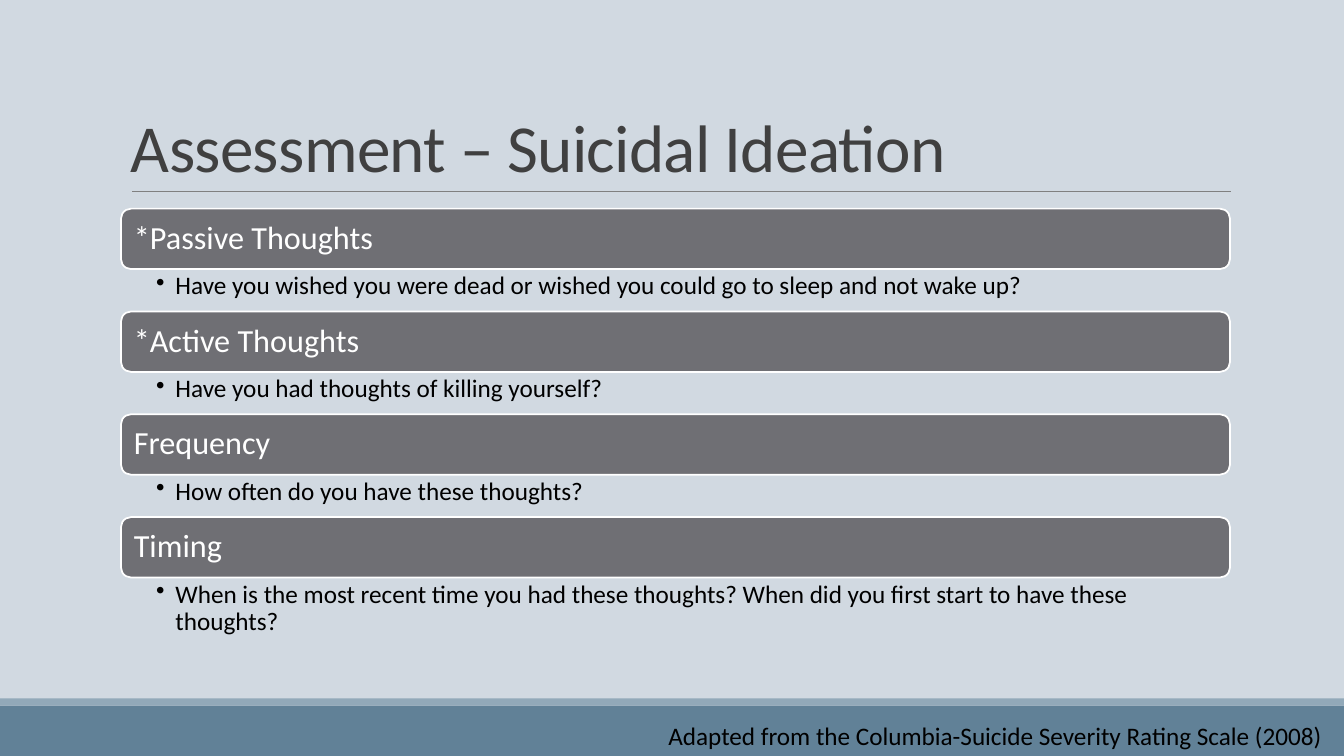
from dataclasses import dataclass

from lxml import etree
from pptx import Presentation
from pptx.dml.color import RGBColor
from pptx.enum.shapes import MSO_CONNECTOR, MSO_SHAPE
from pptx.enum.text import MSO_ANCHOR, PP_ALIGN
from pptx.oxml.ns import qn
from pptx.shapes.autoshape import Shape
from pptx.slide import Slide
from pptx.util import Inches, Pt

RECTANGLE = MSO_SHAPE.RECTANGLE
ROUNDED = MSO_SHAPE.ROUNDED_RECTANGLE
STRAIGHT = MSO_CONNECTOR.STRAIGHT
TOP, MIDDLE, BOTTOM = MSO_ANCHOR.TOP, MSO_ANCHOR.MIDDLE, MSO_ANCHOR.BOTTOM
LEFT = PP_ALIGN.LEFT

FONT = "Calibri"
COLORS = {
    "background": "D1D9E1",
    "footer": "618197",
    "footer_edge": "92A9B9",
    "rule": "808080",
    "title": "404040",
    "bar": "6F6F74",
    "white": "FFFFFF",
    "black": "000000",
}
SLIDE_WIDTH, SLIDE_HEIGHT = 13.33, 7.5
CONTENT_LEFT, CONTENT_WIDTH = 1.2, 11
FIRST_BAR_TOP, BAR_HEIGHT, TOPIC_PITCH = 2.07, 0.6, 1.02
QUESTION_OFFSET = 0.61
HANGING_INDENT = 0.19


@dataclass(frozen=True)
class Topic:
    heading: str
    question: str
    question_height: float = 0.42


@dataclass(frozen=True)
class TextStyle:
    size: float
    color: str
    anchor: MSO_ANCHOR = TOP
    insets: tuple[float, float, float, float] = (0.1, 0.05, 0.1, 0.05)
    line_spacing: float = 1.0


TITLE = TextStyle(48, "title", BOTTOM, line_spacing=0.85)
HEADING = TextStyle(23, "white", MIDDLE, (0.1, 0.1, 0.1, 0.1), 0.9)
QUESTION = TextStyle(18, "black", TOP, (0.35, 0.03, 0.18, 0.03), 0.9)
SOURCE = TextStyle(18, "black")

TOPICS = [
    Topic("*Passive Thoughts",
          "Have you wished you were dead or wished you could go to sleep and not wake up?"),
    Topic("*Active Thoughts", "Have you had thoughts of killing yourself?"),
    Topic("Frequency", "How often do you have these thoughts?"),
    Topic("Timing",
          "When is the most recent time you had these thoughts? "
          "When did you first start to have these thoughts?", 0.62),
]


def rgb(name: str) -> RGBColor:
    return RGBColor.from_string(COLORS[name])


def write(shape: Shape, text: str, style: TextStyle) -> None:
    frame = shape.text_frame
    frame.word_wrap = True
    frame.vertical_anchor = style.anchor
    (frame.margin_left, frame.margin_top,
     frame.margin_right, frame.margin_bottom) = map(Inches, style.insets)
    paragraph = frame.paragraphs[0]
    paragraph.text = text
    paragraph.alignment = LEFT
    paragraph.line_spacing = style.line_spacing
    paragraph.font.name = FONT
    paragraph.font.size = Pt(style.size)
    paragraph.font.color.rgb = rgb(style.color)


def add_text(slide: Slide, left: float, top: float, width: float, height: float,
             text: str, style: TextStyle) -> Shape:
    box = slide.shapes.add_textbox(Inches(left), Inches(top), Inches(width), Inches(height))
    write(box, text, style)
    return box


def add_block(slide: Slide, kind: MSO_SHAPE, left: float, top: float,
              width: float, height: float, fill: str) -> Shape:
    block = slide.shapes.add_shape(
        kind, Inches(left), Inches(top), Inches(width), Inches(height))
    block.shadow.inherit = False
    block.fill.solid()
    block.fill.fore_color.rgb = rgb(fill)
    block.line.fill.background()
    return block


def add_bullet(shape: Shape) -> None:
    properties = shape.text_frame.paragraphs[0]._p.get_or_add_pPr()
    properties.set("marL", str(Inches(HANGING_INDENT)))
    properties.set("indent", str(-Inches(HANGING_INDENT)))
    bullet = etree.Element(qn("a:buChar"), char="•")
    properties.find(qn("a:lnSpc")).addnext(bullet)


def add_topic(slide: Slide, topic: Topic, top: float) -> None:
    bar = add_block(slide, ROUNDED, CONTENT_LEFT, top, CONTENT_WIDTH, BAR_HEIGHT, "bar")
    bar.line.color.rgb = rgb("white")
    bar.line.width = Pt(1.25)
    write(bar, topic.heading, HEADING)
    question = add_text(slide, CONTENT_LEFT, top + QUESTION_OFFSET, CONTENT_WIDTH,
                        topic.question_height, topic.question, QUESTION)
    add_bullet(question)


def main() -> None:
    presentation = Presentation()
    presentation.slide_width = Inches(SLIDE_WIDTH)
    presentation.slide_height = Inches(SLIDE_HEIGHT)
    slide = presentation.slides.add_slide(presentation.slide_layouts[6])
    slide.background.fill.solid()
    slide.background.fill.fore_color.rgb = rgb("background")

    # Footer band
    add_block(slide, RECTANGLE, 0, 7, SLIDE_WIDTH, 0.5, "footer")
    add_block(slide, RECTANGLE, 0, 6.93, SLIDE_WIDTH, 0.07, "footer_edge")

    # Title and its rule
    rule = slide.shapes.add_connector(
        STRAIGHT, Inches(1.31), Inches(1.9), Inches(12.21), Inches(1.9))
    rule.line.color.rgb = rgb("rule")
    rule.line.width = Pt(0.5)
    etree.SubElement(rule._element.spPr, qn("a:effectLst"))
    title = add_text(slide, CONTENT_LEFT, 0.31, CONTENT_WIDTH, 1.59,
                     "Assessment – Suicidal Ideation", TITLE)
    title_run = title.text_frame.paragraphs[0].runs[0]
    title_run._r.get_or_add_rPr().set("spc", "-50")

    # Topics with their questions
    for index, topic in enumerate(TOPICS):
        add_topic(slide, topic, FIRST_BAR_TOP + index * TOPIC_PITCH)

    # Source of the questions
    add_text(slide, 6.53, 7.1, 6.8, 0.4,
             "Adapted from the Columbia-Suicide Severity Rating Scale (2008)", SOURCE)

    presentation.save("out.pptx")


if __name__ == "__main__":
    main()
